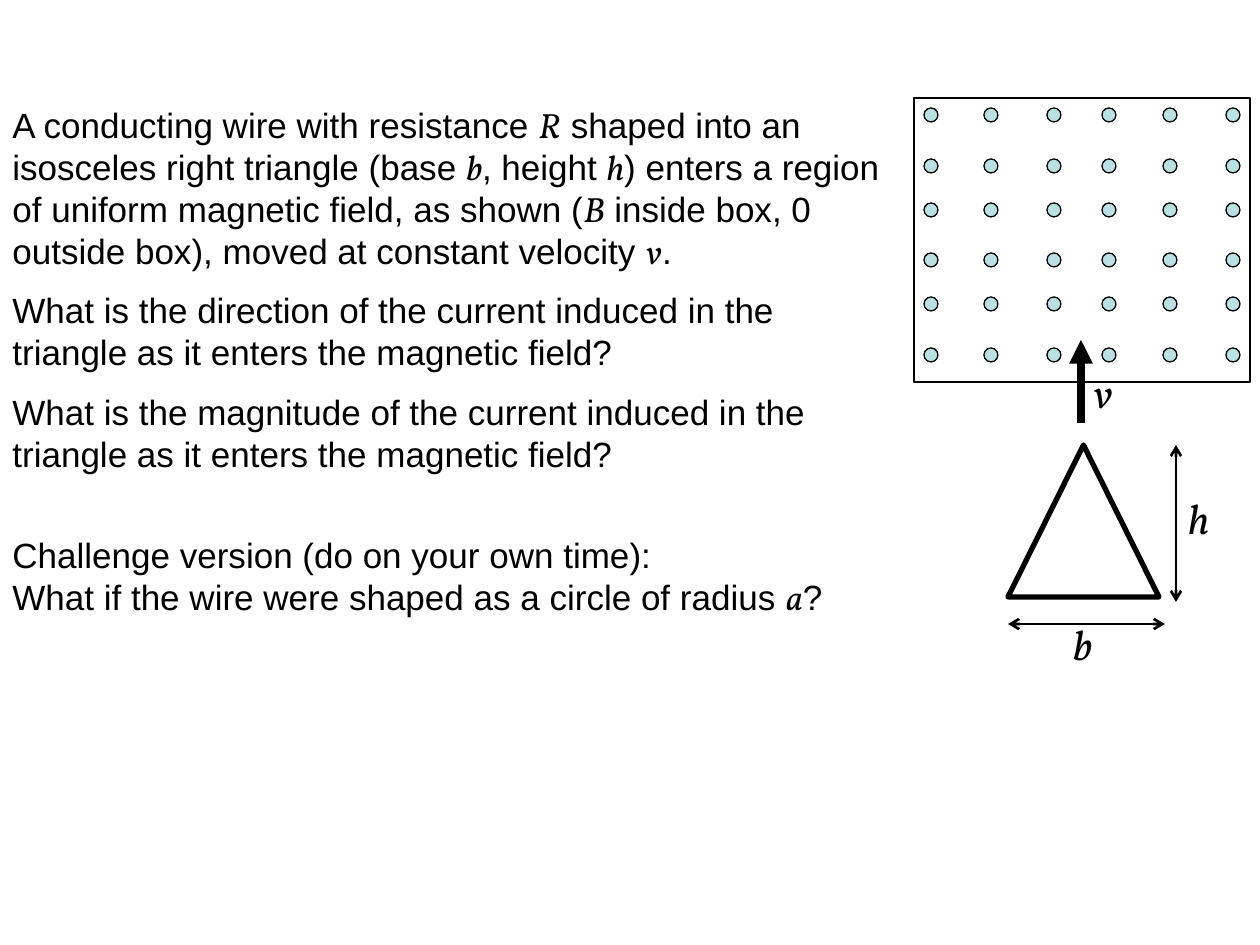
from lxml.etree import SubElement
from pptx import Presentation
from pptx.dml.color import RGBColor
from pptx.enum.shapes import MSO_CONNECTOR, MSO_SHAPE
from pptx.enum.text import MSO_AUTO_SIZE
from pptx.oxml.ns import qn
from pptx.util import Emu, Pt

EMU_PER_PX = 914400 / 126
BLACK, WHITE, FIELD_DOT = "000000", "FFFFFF", "BBE0E3"
TEXT_FONT, SYMBOL_FONT = "Arial", "Vollkorn"

# Symbols stand between asterisks; each entry is (space before in pt, text).
PROBLEM = [
    (0, "A conducting wire with resistance *R* shaped into an isosceles right "
        "triangle (base *b*, height *h*) enters a region of uniform magnetic "
        "field, as shown (*B* inside box, 0 outside box), moved at constant "
        "velocity *v*."),
    (10, "What is the direction of the current induced in the triangle as it "
         "enters the magnetic field?"),
    (10, "What is the magnitude of the current induced in the triangle as it "
         "enters the magnetic field?"),
    (34, "Challenge version (do on your own time):"),
    (0, "What if the wire were shaped as a circle of radius *a*?"),
]
DOT_COLUMNS = (924, 984, 1047, 1102, 1163, 1226)
DOT_ROWS = (108, 159, 203, 253, 297, 348)
DOT_SIZE = 14


def px(value):
    return Emu(round(value * EMU_PER_PX))


def color(hex_string):
    return RGBColor.from_string(hex_string)


def add_text(slide, left, top, width, height, paragraphs, size):
    box = slide.shapes.add_textbox(px(left), px(top), px(width), px(height))
    frame = box.text_frame
    frame.word_wrap = True
    frame.auto_size = MSO_AUTO_SIZE.SHAPE_TO_FIT_TEXT
    for index, (space, text) in enumerate(paragraphs):
        paragraph = frame.add_paragraph() if index else frame.paragraphs[0]
        paragraph.space_before = Pt(space)
        for part_index, part in enumerate(text.split("*")):
            if not part:
                continue
            is_symbol = part_index % 2 == 1
            run = paragraph.add_run()
            run.text = part
            run.font.name = SYMBOL_FONT if is_symbol else TEXT_FONT
            run.font.italic = is_symbol
            run.font.size = Pt(size)
            run.font.color.rgb = color(BLACK)


def add_outlined(shapes, kind, left, top, width, height, fill, line_width):
    shape = shapes.add_shape(kind, px(left), px(top), px(width), px(height))
    shape.shadow.inherit = False
    if fill:
        shape.fill.solid()
        shape.fill.fore_color.rgb = color(fill)
    else:
        shape.fill.background()
    shape.line.color.rgb = color(BLACK)
    shape.line.width = Pt(line_width)


def add_arrow(slide, start, end, line_width, head=None, tail=None):
    arrow = slide.shapes.add_connector(
        MSO_CONNECTOR.STRAIGHT, *map(px, start + end))
    arrow.line.color.rgb = color(BLACK)
    arrow.line.width = Pt(line_width)
    line = arrow.line._get_or_add_ln()
    for tag, kind in (("a:headEnd", head), ("a:tailEnd", tail)):
        if kind:
            SubElement(line, qn(tag), type=kind)
    SubElement(arrow._element.spPr, qn("a:effectLst"))


def add_symbol(slide, left, top, symbol):
    add_text(slide, left, top, 53, 63, [(0, f"*{symbol}*")], 24)


def add_field_dots(slide):
    group = slide.shapes.add_group_shape()
    for top in DOT_ROWS:
        for left in DOT_COLUMNS:
            add_outlined(group.shapes, MSO_SHAPE.OVAL, left, top,
                         DOT_SIZE, DOT_SIZE, FIELD_DOT, 0.75)


def main():
    presentation = Presentation()
    presentation.slide_width, presentation.slide_height = px(1260), px(945)
    slide = presentation.slides.add_slide(presentation.slide_layouts[6])

    # Problem statement
    add_text(slide, 0, 97, 903, 543, PROBLEM, 20)

    # Wire triangle and magnetic field
    add_outlined(slide.shapes, MSO_SHAPE.ISOSCELES_TRIANGLE,
                 1008, 445, 151, 152, WHITE, 3)
    add_field_dots(slide)

    # Velocity
    add_arrow(slide, (1081, 423), (1081, 340), 4.5, tail="triangle")
    add_symbol(slide, 1081, 360, "v")

    # Base and height dimensions
    add_arrow(slide, (1008, 624), (1165, 624), 1.5, "arrow", "arrow")
    add_symbol(slide, 1061, 612, "b")
    add_arrow(slide, (1176, 445), (1176, 602), 1.5, "arrow", "arrow")
    add_symbol(slide, 1176, 486, "h")

    # Boundary of the field region
    add_outlined(slide.shapes, MSO_SHAPE.RECTANGLE,
                 914, 98, 336, 284, None, 0.75)

    presentation.save("out.pptx")


if __name__ == "__main__":
    main()
